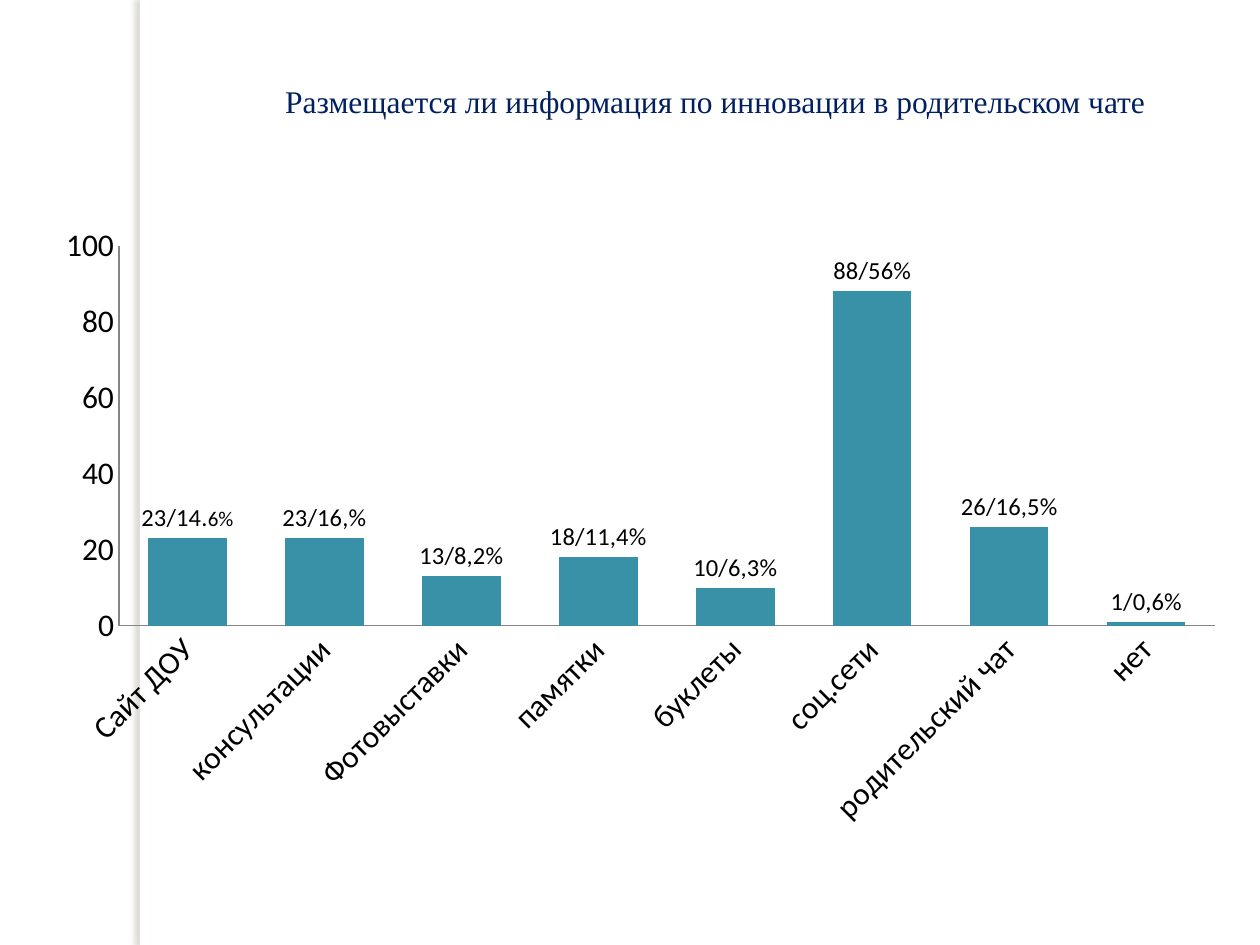
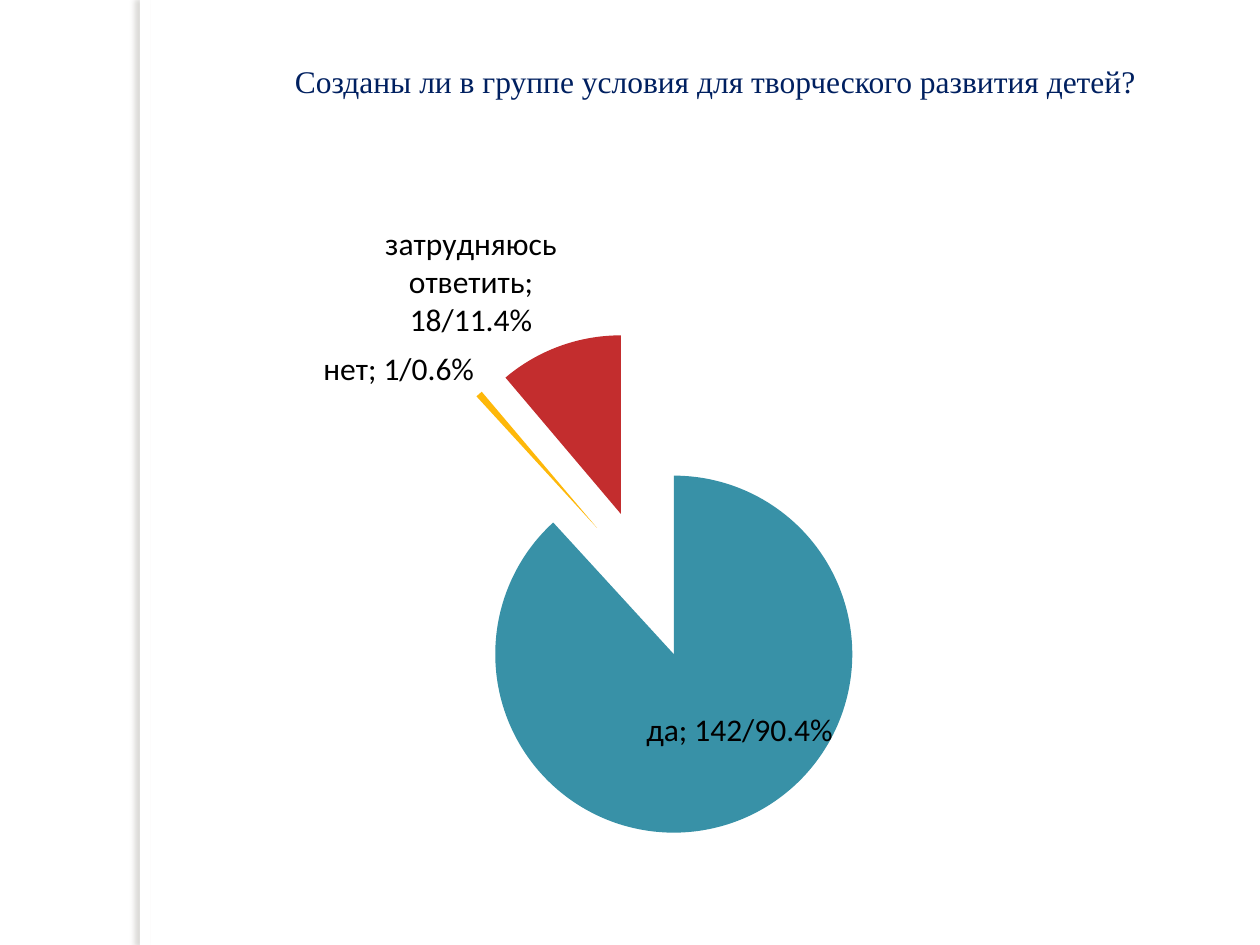
from dataclasses import dataclass

from lxml.etree import SubElement
from pptx import Presentation
from pptx.chart.data import CategoryChartData
from pptx.dml.color import RGBColor
from pptx.enum.chart import XL_CHART_TYPE, XL_LABEL_POSITION, XL_TICK_MARK
from pptx.enum.shapes import MSO_SHAPE
from pptx.enum.text import MSO_ANCHOR, PP_ALIGN
from pptx.oxml.ns import qn
from pptx.util import Pt

BAR, PIE = XL_CHART_TYPE.COLUMN_CLUSTERED, XL_CHART_TYPE.PIE
OUT, MID = XL_LABEL_POSITION.OUTSIDE_END, XL_LABEL_POSITION.CENTER
NO_TICK = XL_TICK_MARK.NONE
RECT = MSO_SHAPE.RECTANGLE
LEFT, TOP = PP_ALIGN.LEFT, MSO_ANCHOR.TOP


@dataclass(frozen=True)
class Theme:
    white: str = "FFFFFF"
    shade: str = "736F63"
    navy: str = "002060"
    black: str = "000000"
    grey: str = "868686"
    teal: str = "3891A7"
    gold: str = "FEB80A"
    red: str = "C32D2E"
    serif: str = "Times New Roman"
    sans: str = "Calibri"
    big: int = 18
    mid: int = 14
    small: int = 12


T = Theme()
WIDE, HIGH = 720, 540
BAND = (80, 0, 6, HIGH)
CHART = (23.76, 122.4, 684, 356.4)


def rgb(code):
    return RGBColor.from_string(code)


def style(font, size=T.big, color=T.black, face=T.sans):
    font.size, font.name, font.bold = Pt(size), face, False
    font.color.rgb = rgb(color)


def put(frame, text, align=None, **form):
    """Add a run of text to the last paragraph of a frame."""
    line = frame.paragraphs[-1]
    if align is not None:
        line.alignment = align
    run = line.add_run()
    run.text = text
    style(run.font, **form)


def paint(part, color):
    part.fill.solid()
    part.fill.fore_color.rgb = rgb(color)


def band(slide, box):
    """White strip that casts a soft shadow to the left."""
    strip = slide.shapes.add_shape(RECT, *map(Pt, box))
    paint(strip, T.white)
    strip.line.fill.background()
    strip.shadow.inherit = False
    glow = SubElement(strip.element.spPr.find(qn("a:effectLst")),
                      qn("a:outerShdw"), blurRad=str(Pt(3)),
                      dist=str(Pt(3)), dir="10800000", rotWithShape="0")
    tint = SubElement(glow, qn("a:srgbClr"), val=T.shade)
    SubElement(tint, qn("a:alpha"), val="25000")


def head(slide, text, box):
    title = slide.shapes.title
    title.left, title.top, title.width, title.height = map(Pt, box)
    frame = title.text_frame
    frame.word_wrap = True
    frame.vertical_anchor = TOP
    put(frame, text, align=LEFT, color=T.navy, face=T.serif)


def place(node, spot, index, **modes):
    """Give a chart node a manual layout, in percent of the chart."""
    old = node.find(qn("c:layout"))
    if old is not None:
        node.remove(old)
    outer = SubElement(node, qn("c:layout"))
    node.insert(index, outer)
    inner = SubElement(outer, qn("c:manualLayout"))
    shares = {key: round(val / 100, 4) for key, val in spot.items()}
    for key, val in (modes | shares).items():
        SubElement(inner, qn("c:" + key), val=str(val))


def frame_plot(chart, x, y, w, h):
    place(chart.element.find(".//" + qn("c:plotArea")),
          dict(x=x, y=y, w=w, h=h), 0,
          layoutTarget="inner", xMode="edge", yMode="edge")


def graph(slide, kind, box, names, vals):
    data = CategoryChartData()
    data.categories = names
    data.add_series("Series 1", vals)
    chart = slide.shapes.add_chart(kind, *map(Pt, box), data).chart
    chart.has_title = chart.has_legend = False
    style(chart.font)
    return chart, chart.plots[0]


def tag(point, *runs, spot=OUT, size=T.big):
    """Label a point; a run is its text or a pair of text and size."""
    label = point.data_label
    for run in runs:
        text, pts = run if isinstance(run, tuple) else (run, size)
        put(label.text_frame, text, size=pts)
    label.position = spot


def bars(slide, box, rows):
    names, vals, tags = zip(*rows)
    chart, plot = graph(slide, BAR, box, names, vals)
    frame_plot(chart, 6.47, 5.05, 91.56, 60.95)
    plot.gap_width = 75
    plot.vary_by_categories = False
    # Axes
    for axis in (chart.category_axis, chart.value_axis):
        axis.has_major_gridlines = False
        axis.major_tick_mark = axis.minor_tick_mark = NO_TICK
        axis.format.line.color.rgb = rgb(T.grey)
        axis.format.line.width = Pt(0.75)
        style(axis.tick_labels.font)
    scale = chart.value_axis
    scale.minimum_scale, scale.maximum_scale, scale.major_unit = 0, 100, 20
    turn = chart.element.find(".//" + qn("c:catAx")).find(
        qn("c:txPr") + "/" + qn("a:bodyPr"))
    turn.set("rot", "-2700000")
    turn.set("vert", "horz")
    # Columns and their labels
    row = plot.series[0]
    paint(row.format, T.teal)
    row.data_labels.show_value = True
    for i, runs in enumerate(tags):
        tag(row.points[i], *runs, size=T.mid)


def pie(slide, box, rows):
    names, vals, colors, tags, spots = zip(*rows)
    chart, plot = graph(slide, PIE, box, names, vals)
    frame_plot(chart, 8.4, 18.7, 84.3, 81.3)
    plot.vary_by_categories = True
    # Pulled-out slices
    node = chart.element.find(".//" + qn("c:ser"))
    burst = SubElement(node, qn("c:explosion"), val="42")
    node.find(qn("c:tx")).addnext(burst)
    row = plot.series[0]
    row.data_labels.show_value = True
    row.data_labels.show_category_name = True
    for i, color in enumerate(colors):
        paint(row.points[i].format, color)
        row.points[i].format.line.fill.background()
        tag(row.points[i], tags[i], spot=spots[i])
    # Labels show the answer with its count
    labels = list(node.iter(qn("c:dLbl")))
    for label in labels:
        label.find(qn("c:showCatName")).set("val", "1")
    # Nudge the label of the largest slice
    place(labels[0], dict(x=2.8, y=-1.2), 1)


WAYS = [
    ("Сайт ДОУ", 23, ["23/14.", ("6%", T.small)]),
    ("консультации", 23, ["23/16,%"]),
    ("Фотовыставки", 13, ["13/8,2%"]),
    ("памятки", 18, ["18/11,4%"]),
    ("буклеты", 10, ["10/6,3%"]),
    ("соц.сети", 88, ["88/56%"]),
    ("родительский чат", 26, ["26/16,5%"]),
    ("нет", 1, ["1/0,6%"]),
]
VOTES = [
    ("да", 142, T.teal, "да; 142/90.4%", MID),
    ("нет", 1, T.gold, "нет; 1/0.6%", OUT),
    ("затрудняюсь ответить", 18, T.red,
     "затрудняюсь ответить; 18/11.4%", OUT),
]
PAGES = [
    ("Размещается ли информация по инновации в родительском чате",
     (155.7, 43.2, 532.8, 28.8), bars, WAYS),
    ("Созданы ли в группе условия для творческого развития детей?",
     (161.28, 31.68, 504.72, 28.8), pie, VOTES),
]


def main():
    deck = Presentation()
    deck.slide_width, deck.slide_height = Pt(WIDE), Pt(HIGH)
    paint(deck.slide_master.background, T.white)
    for text, box, draw, rows in PAGES:
        slide = deck.slides.add_slide(deck.slide_layouts[5])
        band(slide, BAND)
        head(slide, text, box)
        draw(slide, CHART, rows)
    deck.save("out.pptx")


if __name__ == "__main__":
    main()
